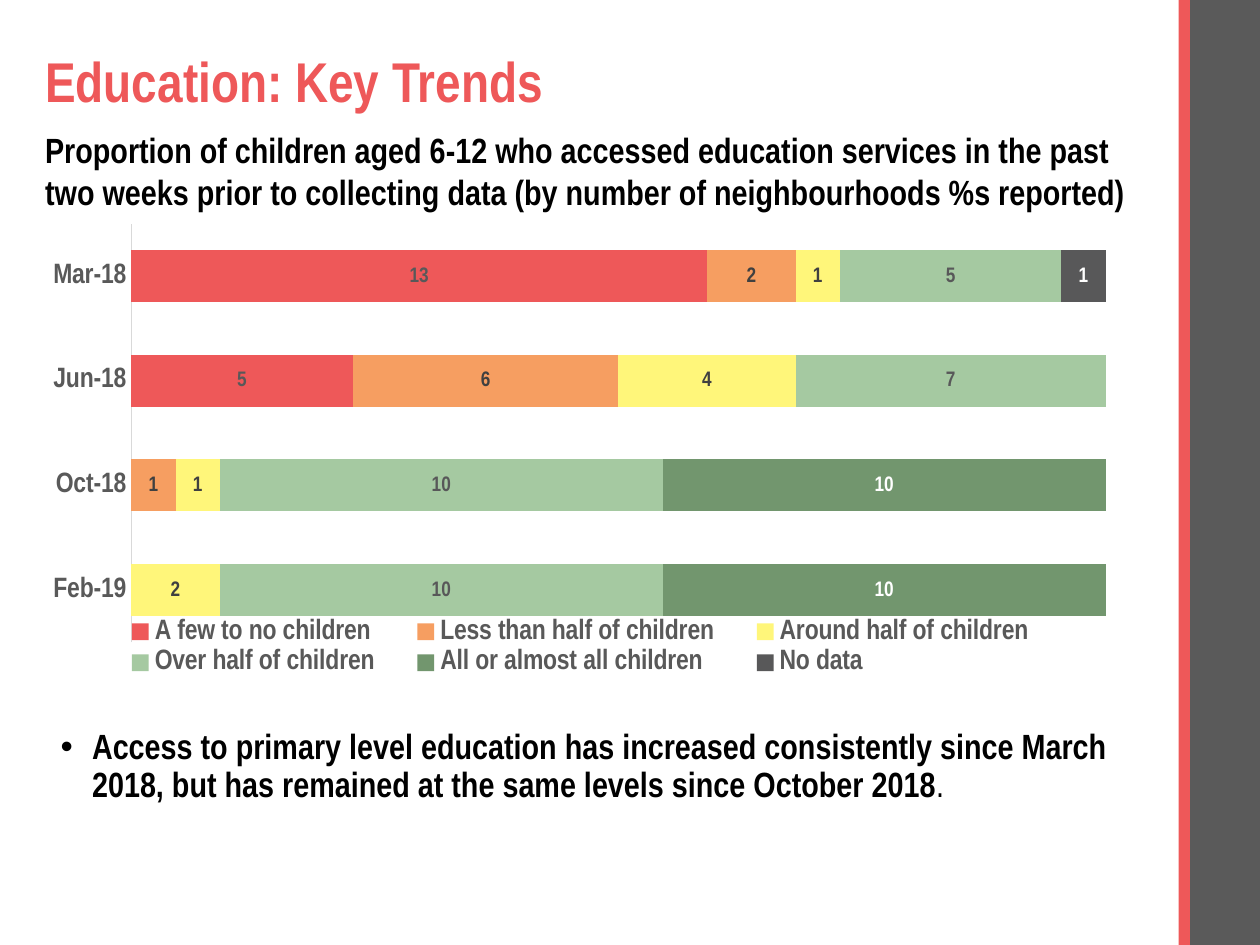
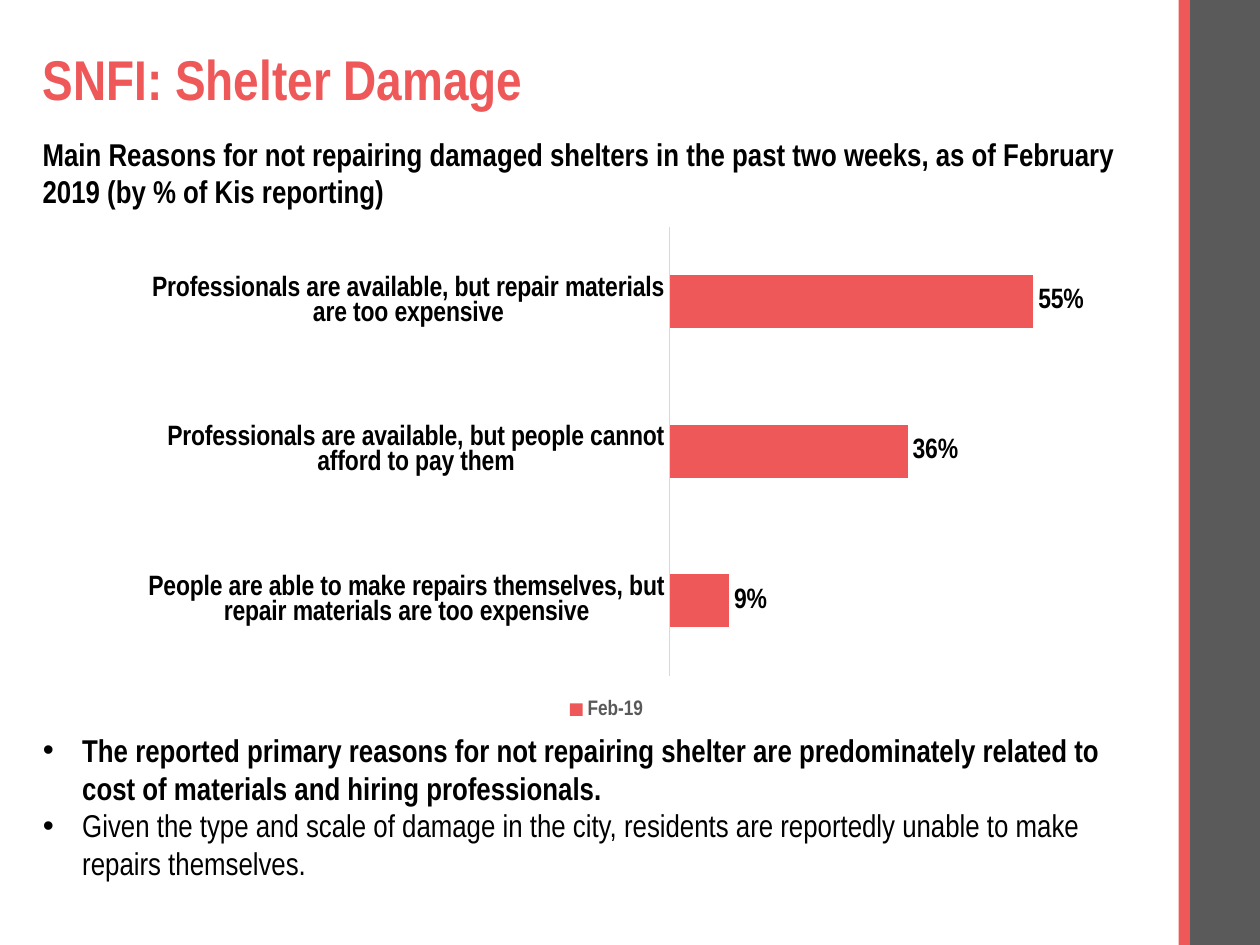
"""Build two slides on education and shelter trends, each with a bar chart."""
import pptx
import pptx.chart.data
import pptx.dml.color
import pptx.enum.chart
import pptx.enum.shapes
import pptx.enum.text
import pptx.oxml
import pptx.oxml.ns
import pptx.util

Pt = pptx.util.Pt
qn = pptx.oxml.ns.qn
CHART_TYPE = pptx.enum.chart.XL_CHART_TYPE
LABEL_POSITION = pptx.enum.chart.XL_LABEL_POSITION
ANCHOR = pptx.enum.text.MSO_ANCHOR

FONT = "Arial Narrow"
COLORS = {
    "red": "EE5859", "orange": "F69E61", "yellow": "FFF67A",
    "light green": "A5C9A1", "green": "72966E", "charcoal": "585859",
    "band": "5A5A5A", "grey": "595959", "dark": "404040",
    "axis": "D9D9D9", "black": "000000", "white": "FFFFFF",
}
SLIDE_SIZE = (720, 540)
BANDS = [("band", 680, 40), ("red", 673.5, 6.5)]

SLIDES = [
    {
        "title": "Education: Key Trends",
        "title_box": (18.7, 21.6, 625.7, 53.3),
        "caption": "Proportion of children aged 6-12 who accessed education services in the past "
                   "two weeks prior to collecting data (by number of neighbourhoods %s reported)",
        "caption_box": (18.7, 69.8, 643.7, 55.4),
        "text_size": 20,
        "bullets": [[
            ("Access to primary level education has increased consistently since March 2018, "
             "but has remained at the same levels since October 2018", True),
            (".", False),
        ]],
        "bullet_box": (27.4, 413.3, 625.7, 100),
        "bullet_format": {"indent": 18, "spacing": 0.9},
        "chart": {
            "type": CHART_TYPE.BAR_STACKED_100,
            "box": (18.7, 122.4, 625.7, 275),
            "categories": ["Feb-19", "Oct-18", "Jun-18", "Mar-18"],
            "series": [
                ("A few to no children", (None, None, 5, 13), "red", "charcoal"),
                ("Less than half of children", (None, 1, 6, 2), "orange", "dark"),
                ("Around half of children", (2, 1, 4, 1), "yellow", "dark"),
                ("Over half of children", (10, 10, 7, 5), "light green", "charcoal"),
                ("All or almost all children", (10, 10, None, None), "green", "white"),
                ("No data", (None, None, None, 1), "charcoal", "white"),
            ],
            "number_format": "0", "gap": 100, "overlap": 100,
            "label_size": 12, "label_position": LABEL_POSITION.CENTER,
            "axis_color": "grey", "legend_size": 16,
            "layouts": {"c:plotArea": (0.09, 0.02, 0.89, 0.87),
                        "c:legend": (0.06, 0.83, 0.88, 0.14)},
        },
    },
    {
        "title": "SNFI: Shelter Damage",
        "title_box": (17.3, 20.2, 625.7, 53.3),
        "caption": "Main Reasons for not repairing damaged shelters in the past two weeks, "
                   "as of February 2019 (by % of Kis reporting)",
        "caption_box": (17.3, 73.4, 643.7, 51.1),
        "text_size": 18,
        "bullets": [
            [("The reported primary reasons for not repairing shelter are predominately related "
              "to cost of materials and hiring professionals.", True)],
            [("Given the type and scale of damage in the city, residents are reportedly unable "
              "to make repairs themselves.", False)],
        ],
        "bullet_box": (17.3, 414, 643.7, 116.6),
        "bullet_format": {"indent": 22.5},
        "chart": {
            "type": CHART_TYPE.BAR_CLUSTERED,
            "box": (73.4, 123.8, 546.5, 290.2),
            "categories": [
                "People are able to make repairs themselves, but repair materials are too expensive",
                "Professionals are available, but people cannot afford to pay them",
                "Professionals are available, but repair materials are too expensive",
            ],
            "series": [("Feb-19", (0.09, 0.36, 0.55), "red", "black")],
            "number_format": "0%", "gap": 182, "overlap": 0, "maximum": 0.6,
            "label_size": 16, "label_position": LABEL_POSITION.OUTSIDE_END,
            "axis_color": "black", "legend_size": 12,
            "layouts": {"c:plotArea": (0.566, 0.02, 0.415, 0.884)},
        },
    },
]


def rgb(name):
    return pptx.dml.color.RGBColor.from_string(COLORS[name])


def format_font(font, size, color, bold=True):
    font.name, font.size, font.bold = FONT, Pt(size), bold
    font.color.rgb = rgb(color)


def place(shape, box):
    shape.left, shape.top, shape.width, shape.height = map(Pt, box)


def write_text(shape, paragraphs, size, color="black", spacing=1.0, indent=0, anchor=ANCHOR.TOP):
    frame = shape.text_frame
    frame.word_wrap = True
    frame.auto_size = pptx.enum.text.MSO_AUTO_SIZE.NONE
    frame.vertical_anchor = anchor
    for index, runs in enumerate(paragraphs):
        paragraph = frame.add_paragraph() if index else frame.paragraphs[0]
        paragraph.alignment = pptx.enum.text.PP_ALIGN.LEFT
        paragraph.line_spacing = spacing
        paragraph.space_before = Pt(0)
        for text, bold in runs:
            run = paragraph.add_run()
            run.text = text
            format_font(run.font, size, color, bold)
    for properties in shape.element.iter(qn("a:pPr")):
        properties.set("marL", str(Pt(indent)))
        properties.set("indent", str(-Pt(indent)))


def move_bands_to_layout(slide, layout):
    for placeholder in list(layout.placeholders)[2:]:
        layout.shapes.element.remove(placeholder.element)
    for color, left, width in BANDS:
        band = slide.shapes.add_shape(
            pptx.enum.shapes.MSO_SHAPE.RECTANGLE, Pt(left), 0, Pt(width), Pt(SLIDE_SIZE[1]))
        band.shadow.inherit = False
        band.fill.solid()
        band.fill.fore_color.rgb = rgb(color)
        band.line.fill.background()
    for band in list(slide.shapes)[-len(BANDS):]:
        layout.shapes.element.append(band.element)


def set_layout(element, fractions, position):
    for old in element.findall(qn("c:layout")):
        element.remove(old)
    inner = '<c:layoutTarget val="inner"/>' if element.tag == qn("c:plotArea") else ""
    modes = "".join(f'<c:{side}Mode val="edge"/>' for side in "xy")
    sizes = "".join(f'<c:{side} val="{value}"/>' for side, value in zip("xywh", fractions))
    element.insert(position, pptx.oxml.parse_xml(
        f'<c:layout {pptx.oxml.ns.nsdecls("c")}><c:manualLayout>'
        f"{inner}{modes}{sizes}</c:manualLayout></c:layout>"))


def add_bar_chart(slide, content):
    data = pptx.chart.data.CategoryChartData(number_format=content["number_format"])
    data.categories = content["categories"]
    for name, values, *_ in content["series"]:
        data.add_series(name, values)
    chart = slide.shapes.add_chart(content["type"], *map(Pt, content["box"]), data).chart
    chart.has_title = False
    format_font(chart.font, 10, "black", False)

    chart.has_legend = True
    chart.legend.position = pptx.enum.chart.XL_LEGEND_POSITION.BOTTOM
    chart.legend.include_in_layout = False
    format_font(chart.legend.font, content["legend_size"], "grey")

    category_axis, value_axis = chart.category_axis, chart.value_axis
    category_axis.major_tick_mark = pptx.enum.chart.XL_TICK_MARK.NONE
    category_axis.format.line.color.rgb = rgb("axis")
    category_axis.format.line.width = Pt(0.75)
    format_font(category_axis.tick_labels.font, 16, content["axis_color"])
    value_axis.visible = False
    value_axis.has_major_gridlines = False
    if "maximum" in content:
        value_axis.minimum_scale, value_axis.maximum_scale = 0, content["maximum"]

    plot = chart.plots[0]
    plot.vary_by_categories = False
    plot.gap_width, plot.overlap = content["gap"], content["overlap"]
    for series, (_, _, fill, label_color) in zip(plot.series, content["series"]):
        series.format.fill.solid()
        series.format.fill.fore_color.rgb = rgb(fill)
        labels = series.data_labels
        labels.show_value = True
        labels.number_format = content["number_format"]
        labels.number_format_is_linked = False
        labels.position = content["label_position"]
        format_font(labels.font, content["label_size"], label_color)

    for tag, fractions in content["layouts"].items():
        set_layout(chart.element.find(".//" + qn(tag)), fractions, int(tag == "c:legend"))


def main():
    presentation = pptx.Presentation()
    presentation.slide_width, presentation.slide_height = map(Pt, SLIDE_SIZE)
    layout = presentation.slide_layouts[1]
    for index, content in enumerate(SLIDES):
        slide = presentation.slides.add_slide(layout)
        if index == 0:
            move_bands_to_layout(slide, layout)
        title, body = slide.placeholders
        place(title, content["title_box"])
        write_text(title, [[(content["title"], True)]], 32, color="red", spacing=0.9,
                   anchor=ANCHOR.MIDDLE)
        caption = slide.shapes.add_textbox(*map(Pt, content["caption_box"]))
        write_text(caption, [[(content["caption"], True)]], content["text_size"])
        add_bar_chart(slide, content["chart"])
        place(body, content["bullet_box"])
        write_text(body, content["bullets"], content["text_size"], **content["bullet_format"])
    presentation.save("out.pptx")


if __name__ == "__main__":
    main()
